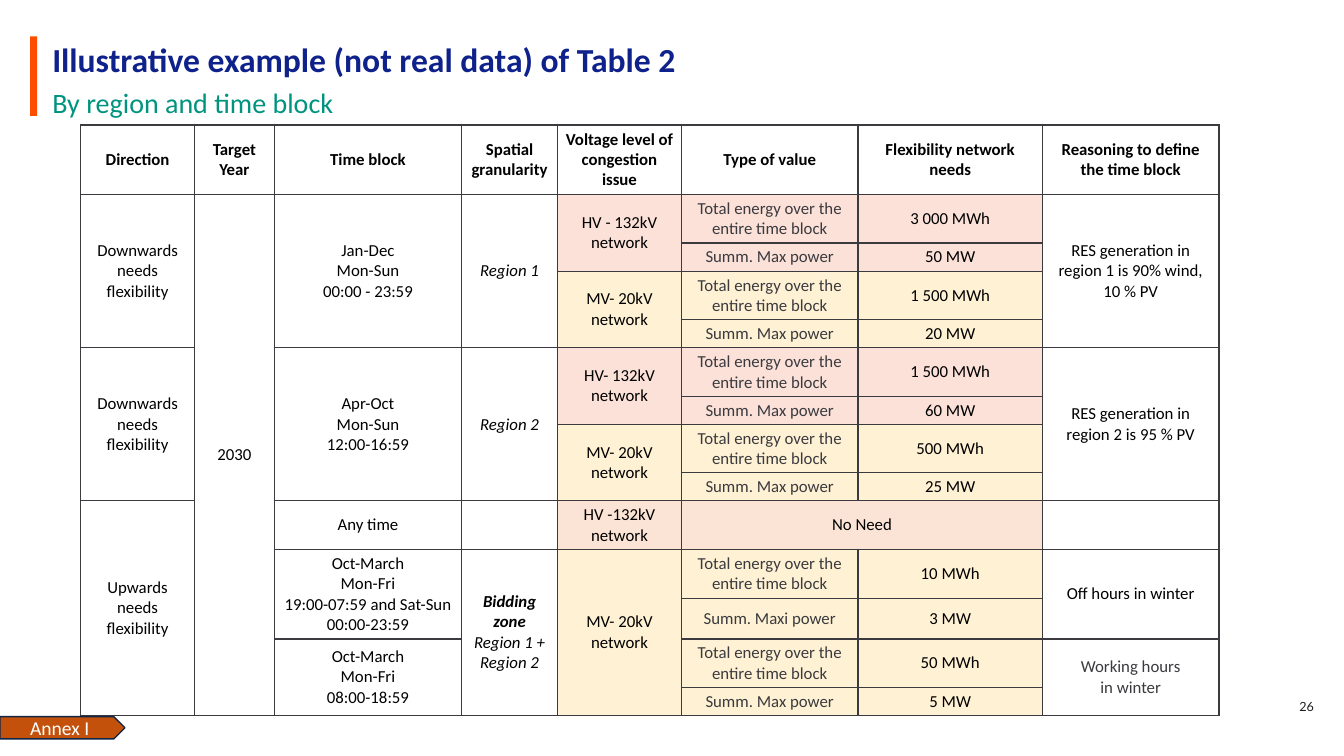
from lxml import etree
from pptx import Presentation
from pptx.dml.color import RGBColor
from pptx.enum.shapes import MSO_SHAPE
from pptx.enum.text import MSO_ANCHOR, PP_ALIGN
from pptx.oxml.ns import qn
from pptx.util import Inches, Pt

RECTANGLE, PENTAGON = MSO_SHAPE.RECTANGLE, MSO_SHAPE.PENTAGON
MIDDLE = MSO_ANCHOR.MIDDLE
LEFT, CENTER, RIGHT = PP_ALIGN.LEFT, PP_ALIGN.CENTER, PP_ALIGN.RIGHT

COLORS = {
    "title": "0F218B", "subtitle": "00947F", "accent": "FF4D00",
    "annex": "C4510B", "annex_line": "0E2548", "number": "1D1D20",
    "black": "000000", "grey": "3A3A3F", "white": "FFFFFF",
    "high": "FBE1D8", "high_no_need": "FBE4D5", "medium": "FFF1D3",
}

COLUMN_WIDTHS = [1.13, 0.79, 1.86, 0.95, 1.23, 1.75, 1.83, 1.75]
ROW_HEIGHTS = [0.69] + [0.48, 0.28] * 4 + [0.48, 0.49, 0.4, 0.48, 0.28]
HEADINGS = [
    "Direction", "Target Year", "Time block", "Spatial granularity",
    "Voltage level of congestion issue", "Type of value",
    "Flexibility network needs", "Reasoning to define the time block",
]

# Row, column, rows spanned, text
PLAIN_CELLS = [
    (1, 0, 4, "Downwards needs flexibility"),
    (5, 0, 4, "Downwards needs flexibility"),
    (9, 0, 5, "Upwards needs flexibility"),
    (1, 1, 13, "2030"),
    (1, 2, 4, "Jan-Dec\nMon-Sun\n00:00 - 23:59"),
    (5, 2, 4, "Apr-Oct\nMon-Sun\n12:00-16:59"),
    (9, 2, 1, "Any time"),
    (10, 2, 2, "Oct-March\nMon-Fri\n19:00-07:59 and Sat-Sun\n00:00-23:59"),
    (12, 2, 2, "Oct-March\nMon-Fri\n08:00-18:59"),
    (1, 7, 4, "RES generation in region 1 is 90% wind, 10 % PV"),
    (5, 7, 4, "RES generation in region 2 is 95 % PV"),
    (10, 7, 2, "Off hours in winter"),
]
REGION_CELLS = [
    (1, 4, "Region 1"),
    (5, 4, "Region 2"),
    (10, 4, "Bidding zone\nRegion 1 + Region 2"),
]
# Row, rows spanned, text, fill
VOLTAGE_CELLS = [
    (1, 2, "HV - 132kV network", "high"),
    (3, 2, "MV- 20kV network", "medium"),
    (5, 2, "HV- 132kV network", "high"),
    (7, 2, "MV- 20kV network", "medium"),
    (9, 1, "HV -132kV network", "high_no_need"),
    (10, 4, "MV- 20kV network", "medium"),
]
# First row, energy, power, power label, fill
NEEDS = [
    (1, "3 000 MWh", "50 MW", "Summ. Max power", "high"),
    (3, "1 500 MWh", "20 MW", "Summ. Max power", "medium"),
    (5, "1 500 MWh", "60 MW", "Summ. Max power", "high"),
    (7, "500 MWh", "25 MW", "Summ. Max power", "medium"),
    (10, "10 MWh", "3 MW", "Summ. Maxi power", "medium"),
    (12, "50 MWh", "5 MW", "Summ. Max power", "medium"),
]


def rgb(name):
    return RGBColor.from_string(COLORS[name])


def write(frame, text, size, color, align=CENTER, bold=False, italic=False,
          font="Calibri", spacing=None):
    frame.text = text
    frame.word_wrap = True
    frame.vertical_anchor = MIDDLE
    for paragraph in frame.paragraphs:
        paragraph.alignment = align
        if spacing:
            paragraph.line_spacing = Pt(spacing)
        for span in paragraph.runs:
            span.font.name = font
            span.font.size = Pt(size)
            span.font.bold = bold
            span.font.italic = italic
            span.font.color.rgb = rgb(color)


def add_text(page, box, text, size, color, **style):
    label = page.shapes.add_textbox(*map(Inches, box))
    write(label.text_frame, text, size, color, **style)


def add_block(page, kind, box, fill, line=None):
    block = page.shapes.add_shape(kind, *map(Inches, box))
    block.shadow.inherit = False
    block.fill.solid()
    block.fill.fore_color.rgb = rgb(fill)
    if line:
        block.line.color.rgb = rgb(line)
        block.line.width = Pt(1)
    else:
        block.line.fill.background()
    return block


def add_header(page, left, top, width):
    add_block(page, RECTANGLE, (left, top, 0.07, 0.79), "accent")
    text_left, text_width = left + 0.12, width - 0.12
    add_text(page, (text_left, top + 0.01, text_width, 0.39),
             "Illustrative example (not real data) of Table 2", 24, "title",
             align=LEFT, bold=True, spacing=32)
    add_text(page, (text_left, top + 0.4, text_width, 0.48),
             "By region and time block", 20, "subtitle", align=LEFT, spacing=26)


def add_borders(cell):
    properties = cell._tc.get_or_add_tcPr()
    for side in ("lnL", "lnR", "lnT", "lnB"):
        line = etree.SubElement(properties, qn("a:" + side), w=str(Pt(1)))
        solid = etree.SubElement(line, qn("a:solidFill"))
        etree.SubElement(solid, qn("a:srgbClr"), val=COLORS["grey"])


def fill_cell(table, row, column, text, rows=1, columns=1, fill="white",
              color="black", **style):
    cell = table.cell(row, column)
    if rows > 1 or columns > 1:
        cell.merge(table.cell(row + rows - 1, column + columns - 1))
    cell.fill.solid()
    cell.fill.fore_color.rgb = rgb(fill)
    write(cell.text_frame, text, 12, color, **style)
    cell.vertical_anchor = MIDDLE
    return cell


def add_needs_table(page, left, top):
    table = page.shapes.add_table(
        len(ROW_HEIGHTS), len(COLUMN_WIDTHS), Inches(left), Inches(top),
        Inches(sum(COLUMN_WIDTHS)), Inches(sum(ROW_HEIGHTS))).table
    table.first_row = table.horz_banding = False
    for column, width in zip(table.columns, COLUMN_WIDTHS):
        column.width = Inches(width)
    for row, height in zip(table.rows, ROW_HEIGHTS):
        row.height = Inches(height)
    for cell in table.iter_cells():
        cell.margin_left = cell.margin_right = Inches(0.07)
        cell.margin_top = cell.margin_bottom = Inches(0.04)
        add_borders(cell)
        cell.fill.solid()
        cell.fill.fore_color.rgb = rgb("white")

    # Headings, direction, year, time blocks and reasoning
    for column, heading in enumerate(HEADINGS):
        fill_cell(table, 0, column, heading, bold=True)
    for row, column, rows, text in PLAIN_CELLS:
        fill_cell(table, row, column, text, rows)
    fill_cell(table, 12, 7, "Working hours\nin winter", 2, color="grey")

    # Regions
    for row, rows, text in REGION_CELLS:
        region = fill_cell(table, row, 3, text, rows, italic=True)
    region.text_frame.paragraphs[0].runs[0].font.bold = True

    # Voltage levels and their needs
    for row, rows, text, fill in VOLTAGE_CELLS:
        fill_cell(table, row, 4, text, rows, fill=fill)
    fill_cell(table, 9, 5, "No Need", columns=2, fill="high_no_need")
    for row, energy, power, power_label, fill in NEEDS:
        values = [("Total energy over the entire time block", energy),
                  (power_label, power)]
        for offset, (label, value) in enumerate(values):
            fill_cell(table, row + offset, 5, label, fill=fill, color="grey")
            fill_cell(table, row + offset, 6, value, fill=fill)


def add_footer(page, top, right):
    add_text(page, (right - 6.38, top, 6.38, 0.4), "26", 9, "number",
             align=RIGHT, font="Lato", spacing=9)
    annex = add_block(page, PENTAGON, (0, top + 0.29, 1.24, 0.22),
                      "annex", "annex_line")
    write(annex.text_frame, "Annex I", 14, "white")


def main():
    deck = Presentation()
    deck.slide_width, deck.slide_height = Inches(13.33), Inches(7.5)
    page = deck.slides.add_slide(deck.slide_layouts[6])
    add_header(page, 0.3, 0.36, 12.83)
    add_needs_table(page, 0.8, 1.24)
    add_footer(page, 6.82, 13.13)
    deck.save("out.pptx")


if __name__ == "__main__":
    main()
